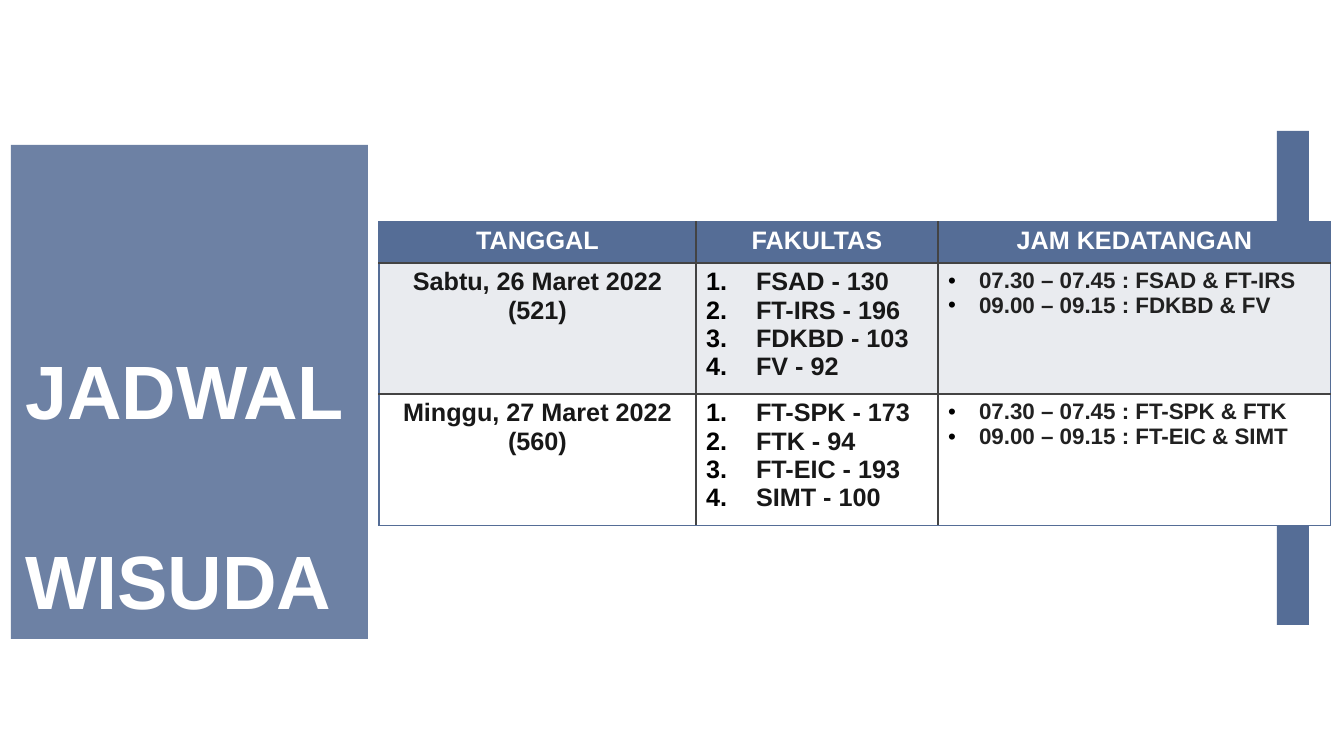
import lxml.etree
import pptx
import pptx.dml.color
import pptx.enum.shapes
import pptx.enum.text
import pptx.oxml.ns
import pptx.util

PX = 914400 / 100.8
qn = pptx.oxml.ns.qn
RGB = pptx.dml.color.RGBColor.from_string
ALIGN = pptx.enum.text.PP_ALIGN
THEME = {
    "font": "Arial",
    "blue": "556D96",
    "white": "FFFFFF",
    "band": "E9EBEF",
    "ink": "181818",
    "time": "212121",
    "grid": "434343",
    "bullet": "000000",
    "title_size": 54,
    "body_size": 18,
    "time_size": 16,
}


def px(*lengths):
    return [round(length * PX) for length in lengths]


def write_text(frame, lines, size=THEME["body_size"], color=THEME["ink"],
               align=ALIGN.LEFT, spacing=None, bullet=None, indent=0):
    for index, line in enumerate(lines):
        paragraph = frame.paragraphs[0] if index == 0 else frame.add_paragraph()
        paragraph.text = line
        paragraph.alignment = align
        if spacing:
            paragraph.line_spacing = spacing
        for run in paragraph.runs:
            run.font.name = THEME["font"]
            run.font.size = pptx.util.Pt(size)
            run.font.bold = True
            run.font.color.rgb = RGB(color)
        if bullet:
            properties = paragraph._p.get_or_add_pPr()
            hanging = px(indent)[0]
            properties.set("marL", str(hanging))
            properties.set("indent", str(-hanging))
            bullet_color = lxml.etree.SubElement(properties, qn("a:buClr"))
            lxml.etree.SubElement(bullet_color, qn("a:srgbClr"), val=THEME["bullet"])
            lxml.etree.SubElement(properties, qn("a:buFont"), typeface=THEME["font"])
            if bullet == "number":
                lxml.etree.SubElement(properties, qn("a:buAutoNum"), type="arabicPeriod")
            else:
                lxml.etree.SubElement(properties, qn("a:buChar"), char=bullet)


presentation = pptx.Presentation()
presentation.slide_width, presentation.slide_height = px(1344, 756)
slide = presentation.slides.add_slide(presentation.slide_layouts[6])

rectangles = []
for box in [(11, 145, 357, 494), (1277, 131, 32, 494)]:
    rectangle = slide.shapes.add_shape(pptx.enum.shapes.MSO_SHAPE.RECTANGLE, *px(*box))
    rectangle.shadow.inherit = False
    rectangle.fill.solid()
    rectangle.fill.fore_color.rgb = RGB(THEME["blue"])
    rectangle.line.fill.background()
    rectangles.append(rectangle)
panel_color = rectangles[0]._element.spPr.find(".//" + qn("a:srgbClr"))
lxml.etree.SubElement(panel_color, qn("a:alpha"), val="86000")

title = slide.shapes.add_textbox(*px(12, 299, 356, 339))
title_frame = title.text_frame
title_frame.word_wrap = True
title_frame.vertical_anchor = pptx.enum.text.MSO_ANCHOR.BOTTOM
title_frame.margin_left, title_frame.margin_top = px(13, 13)
title_frame.margin_right, title_frame.margin_bottom = px(13, 13)
write_text(title_frame, ["JADWAL\vWISUDA"], size=THEME["title_size"],
           color=THEME["white"], spacing=2.1)

schedule = [
    [["TANGGAL"], ["FAKULTAS"], ["JAM KEDATANGAN"]],
    [
        ["Sabtu, 26 Maret 2022", "(521)"],
        ["FSAD - 130", "FT-IRS - 196", "FDKBD - 103", "FV - 92"],
        ["07.30 – 07.45 : FSAD & FT-IRS", "09.00 – 09.15 : FDKBD & FV"],
    ],
    [
        ["Minggu, 27 Maret 2022", "(560)"],
        ["FT-SPK - 173", "FTK - 94", "FT-EIC - 193", "SIMT - 100"],
        ["07.30 – 07.45 : FT-SPK & FTK", "09.00 – 09.15 : FT-EIC & SIMT"],
    ],
]
column_widths = px(317, 242, 393)
row_heights = px(41, 123, 123)
row_fills = [THEME["blue"], THEME["band"], THEME["white"]]
header_format = {"color": THEME["white"], "align": ALIGN.CENTER}
column_formats = [
    {"align": ALIGN.CENTER},
    {"bullet": "number", "indent": 50},
    {"bullet": "•", "indent": 31, "size": THEME["time_size"], "color": THEME["time"]},
]

table = slide.shapes.add_table(3, 3, *px(379, 222, 952, 287)).table
for column, width in zip(table.columns, column_widths):
    column.width = width
for row, height in zip(table.rows, row_heights):
    row.height = height

for row_index, row_lines in enumerate(schedule):
    for column_index, lines in enumerate(row_lines):
        cell = table.cell(row_index, column_index)
        cell.fill.solid()
        cell.fill.fore_color.rgb = RGB(row_fills[row_index])
        text_format = header_format if row_index == 0 else column_formats[column_index]
        write_text(cell.text_frame, lines, **text_format)
        outer_sides = [
            ("a:lnL", column_index == 0),
            ("a:lnR", column_index == 2),
            ("a:lnT", row_index == 0),
            ("a:lnB", row_index == 2),
        ]
        cell_properties = cell._tc.get_or_add_tcPr()
        for position, (side, is_outer) in enumerate(outer_sides):
            border = lxml.etree.Element(qn(side), w=str(pptx.util.Pt(1)))
            border_fill = lxml.etree.SubElement(border, qn("a:solidFill"))
            border_color = THEME["blue"] if is_outer else THEME["grid"]
            lxml.etree.SubElement(border_fill, qn("a:srgbClr"), val=border_color)
            cell_properties.insert(position, border)

presentation.save("out.pptx")
